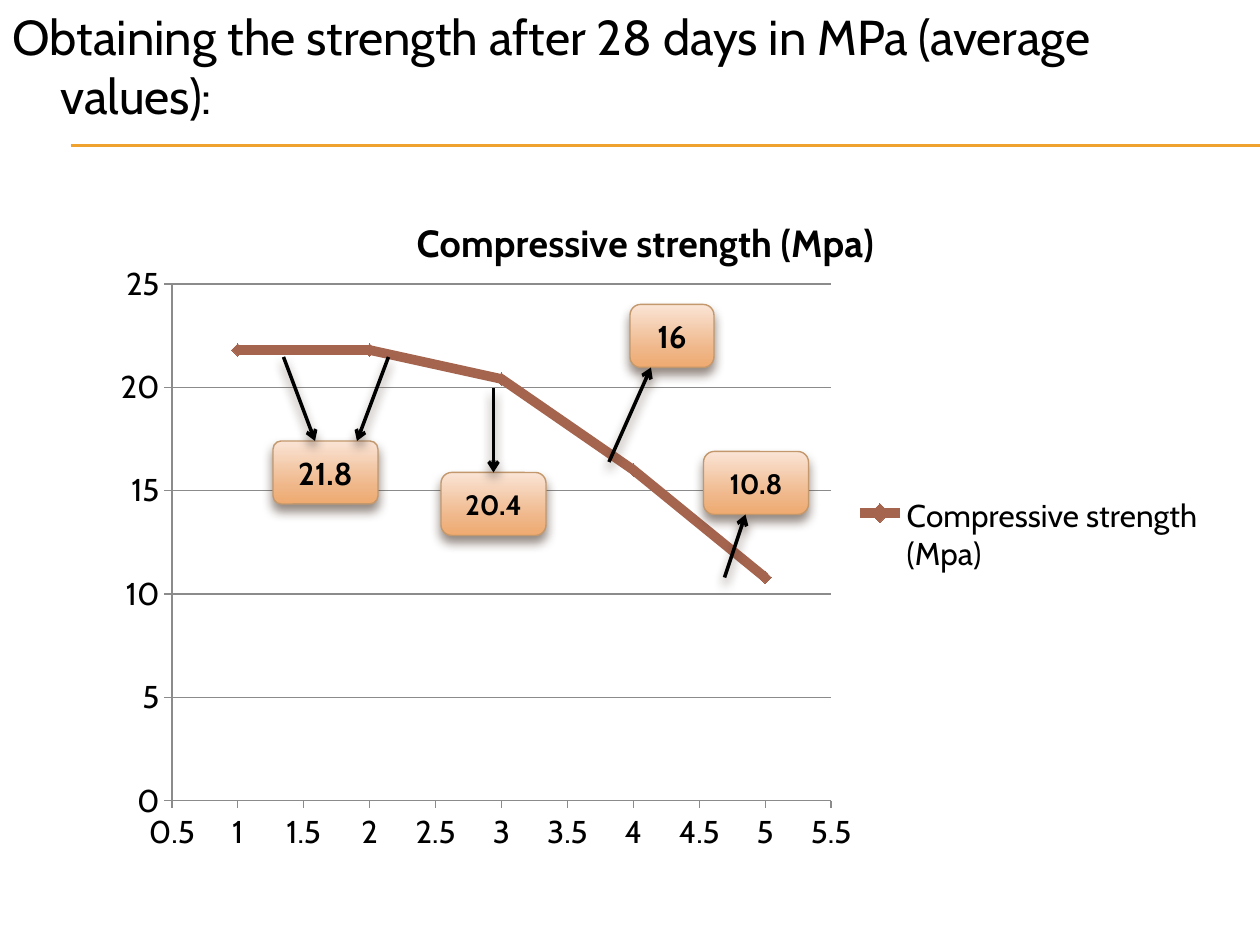
from dataclasses import dataclass

from pptx import Presentation, util as u
from pptx.chart.data import XyChartData
from pptx.dml.color import RGBColor
from pptx.enum import chart as ch, shapes, text
from pptx.oxml import parse_xml
from pptx.oxml.ns import nsdecls, qn


@dataclass(frozen=True)
class Theme:
    font: str = "Cabin"
    ink: str = "000000"
    rule: str = "F0A22E"
    curve: str = "A5644E"
    grid: str = "8B8B8B"
    border: str = "C3986D"
    shadow: str = "4E3B30"
    stops: tuple = ((0, "FAE4D5"), (72, "EFB688"), (100, "EFAA6F"))
    title: float = 28
    chart_title: float = 21.6
    body: float = 18
    small: float = 16


T = Theme()
W, H = u.Inches(10), u.Inches(7.5)
COLS, ROWS = 120, 90  # square cells over the slide
NAME = "Compressive strength (Mpa)"
POINTS = [(1, 21.8), (2, 21.8), (3, 20.4), (4, 16), (5, 10.8)]
PLOT = dict(x=0.086, y=0.137, w=0.576, h=0.746)

# Callouts: label, column, row, width in columns, type size, corner
CALLOUTS = [
    ("21.8", 26, 42, 10, T.body, 0.13),
    ("20.4", 42, 45, 10, T.small, 0.17),
    ("16", 60, 29, 8, T.body, 0.17),
    ("10.8", 67, 43, 10, T.small, 0.17),
]
# Arrows: start column and row, end column and row, callout joined at its top
ARROWS = [
    (27, 34, 30, 42, None),
    (37, 34, 34, 42, None),
    (47, 37, 47, 45, "20.4"),
    (58, 44, 62, 35, None),
    (69, 55, 71, 49, None),
]


def x(col):
    return round(W * col / COLS)


def y(row):
    return round(H * row / ROWS)


def apply(obj, **values):
    for key, value in values.items():
        setattr(obj, key, value)


def format_font(font, size, bold=False):
    apply(font, name=T.font, size=u.Pt(size), bold=bold)
    font.color.rgb = RGBColor.from_string(T.ink)


def format_line(line, color, width):
    line.color.rgb = RGBColor.from_string(color)
    line.width = u.Pt(width)


def set_effect(sp, shadow=True):
    """Give the shape a soft shadow below it, or none."""
    outer = (
        f'<a:outerShdw blurRad="{u.Pt(6)}" dist="{u.Pt(4)}" dir="5400000" rotWithShape="0">'
        f'<a:srgbClr val="{T.shadow}"><a:alpha val="60000"/></a:srgbClr></a:outerShdw>'
    ) if shadow else ""
    sp._element.spPr.append(
        parse_xml(f'<a:effectLst {nsdecls("a")}>{outer}</a:effectLst>'))


def add_title(s, words):
    sp = s.shapes.title
    apply(sp, left=0, top=0, width=W, height=u.Inches(1.04))
    tf = sp.text_frame
    apply(tf, text=words, word_wrap=True, auto_size=text.MSO_AUTO_SIZE.NONE,
          vertical_anchor=text.MSO_ANCHOR.TOP)
    p = tf.paragraphs[0]
    p.alignment = text.PP_ALIGN.LEFT
    indent = u.Inches(0.38)
    pPr = p._p.get_or_add_pPr()
    pPr.set("marL", str(indent))
    pPr.set("indent", str(-indent))
    format_font(p.runs[0].font, T.title)


def add_line(s, start, end, color, width):
    line = s.shapes.add_connector(shapes.MSO_CONNECTOR.STRAIGHT, *start, *end)
    format_line(line.line, color, width)
    return line


def add_rules(s):
    for top in (1.15, 1.16):
        rule = add_line(s, (u.Inches(0.56), u.Inches(top)), (W, u.Inches(top)), T.rule, 0.75)
        set_effect(rule, shadow=False)


def add_arrow(s, c1, r1, c2, r2, target=None):
    arrow = add_line(s, (x(c1), y(r1)), (x(c2), y(r2)), T.ink, 2)
    if target is not None:
        arrow.end_connect(target, 0)
    arrow.line._get_or_add_ln().append(
        parse_xml(f'<a:tailEnd {nsdecls("a")} type="arrow"/>'))
    set_effect(arrow)


def add_callout(s, label, col, row, cols, size, corner):
    sp = s.shapes.add_shape(shapes.MSO_SHAPE.ROUNDED_RECTANGLE,
                            x(col), y(row), x(cols), y(6))
    sp.adjustments[0] = corner
    sp.fill.gradient()
    sp.fill.gradient_angle = 270  # counter-clockwise: light at the top
    stops = sp._element.spPr.find(qn("a:gradFill")).find(qn("a:gsLst"))
    for old in list(stops):
        stops.remove(old)
    for position, color in T.stops:
        stops.append(parse_xml(f'<a:gs {nsdecls("a")} pos="{position * 1000}">'
                               f'<a:srgbClr val="{color}"/></a:gs>'))
    format_line(sp.line, T.border, 0.79)
    set_effect(sp)
    tf = sp.text_frame
    apply(tf, text=label, word_wrap=True, vertical_anchor=text.MSO_ANCHOR.MIDDLE)
    p = tf.paragraphs[0]
    p.alignment = text.PP_ALIGN.CENTER
    format_font(p.runs[0].font, size, bold=True)
    return sp


def format_axis(axis, low, high, step, grid):
    apply(axis, minimum_scale=low, maximum_scale=high, major_unit=step,
          has_major_gridlines=grid, major_tick_mark=ch.XL_TICK_MARK.OUTSIDE,
          minor_tick_mark=ch.XL_TICK_MARK.NONE)
    apply(axis.tick_labels, number_format="General", number_format_is_linked=False)
    format_line(axis.format.line, T.grid, 0.75)
    if grid:
        format_line(axis.major_gridlines.format.line, T.grid, 0.75)


def add_strength_chart(s):
    data = XyChartData()
    points = data.add_series(NAME)
    for point in POINTS:
        points.add_data_point(*point)
    chart = s.shapes.add_chart(ch.XL_CHART_TYPE.XY_SCATTER_SMOOTH, x(7), y(18),
                               x(109), y(66), data).chart
    format_font(chart.font, T.body)

    # Title and legend
    apply(chart, has_title=True, has_legend=True)
    chart.chart_title.text_frame.text = NAME
    format_font(chart.chart_title.text_frame.paragraphs[0].runs[0].font,
                T.chart_title, bold=True)
    apply(chart.legend, position=ch.XL_LEGEND_POSITION.RIGHT, include_in_layout=False)

    # Axes
    format_axis(chart.category_axis, 0.5, 5.5, 0.5, grid=False)
    format_axis(chart.value_axis, 0, 25, 5, grid=True)

    # Curve
    chart.plots[0].vary_by_categories = False
    curve = chart.plots[0].series[0]
    curve.smooth = True
    format_line(curve.format.line, T.curve, 5.5)
    apply(curve.marker, style=ch.XL_MARKER_STYLE.DIAMOND, size=7)
    curve.marker.format.fill.solid()
    curve.marker.format.fill.fore_color.rgb = RGBColor.from_string(T.curve)
    curve.marker.format.line.color.rgb = RGBColor.from_string(T.curve)

    # Inner plot area, as shares of the chart
    area = chart._chartSpace.chart.plotArea
    for old in area.findall(qn("c:layout")):
        area.remove(old)
    sizes = "".join(f'<c:{key} val="{share}"/>' for key, share in PLOT.items())
    area.insert(0, parse_xml(
        f'<c:layout {nsdecls("c")}><c:manualLayout><c:layoutTarget val="inner"/>'
        f'<c:xMode val="edge"/><c:yMode val="edge"/>{sizes}</c:manualLayout></c:layout>'))


def main():
    prs = Presentation()
    apply(prs, slide_width=W, slide_height=H)
    s = prs.slides.add_slide(prs.slide_layouts[5])
    add_rules(s)
    add_strength_chart(s)
    boxes = {callout[0]: add_callout(s, *callout) for callout in CALLOUTS}
    for *ends, label in ARROWS:
        add_arrow(s, *ends, target=boxes.get(label))
    add_title(s, "Obtaining the strength after 28 days in MPa (average values):")
    prs.save("out.pptx")


if __name__ == "__main__":
    main()
